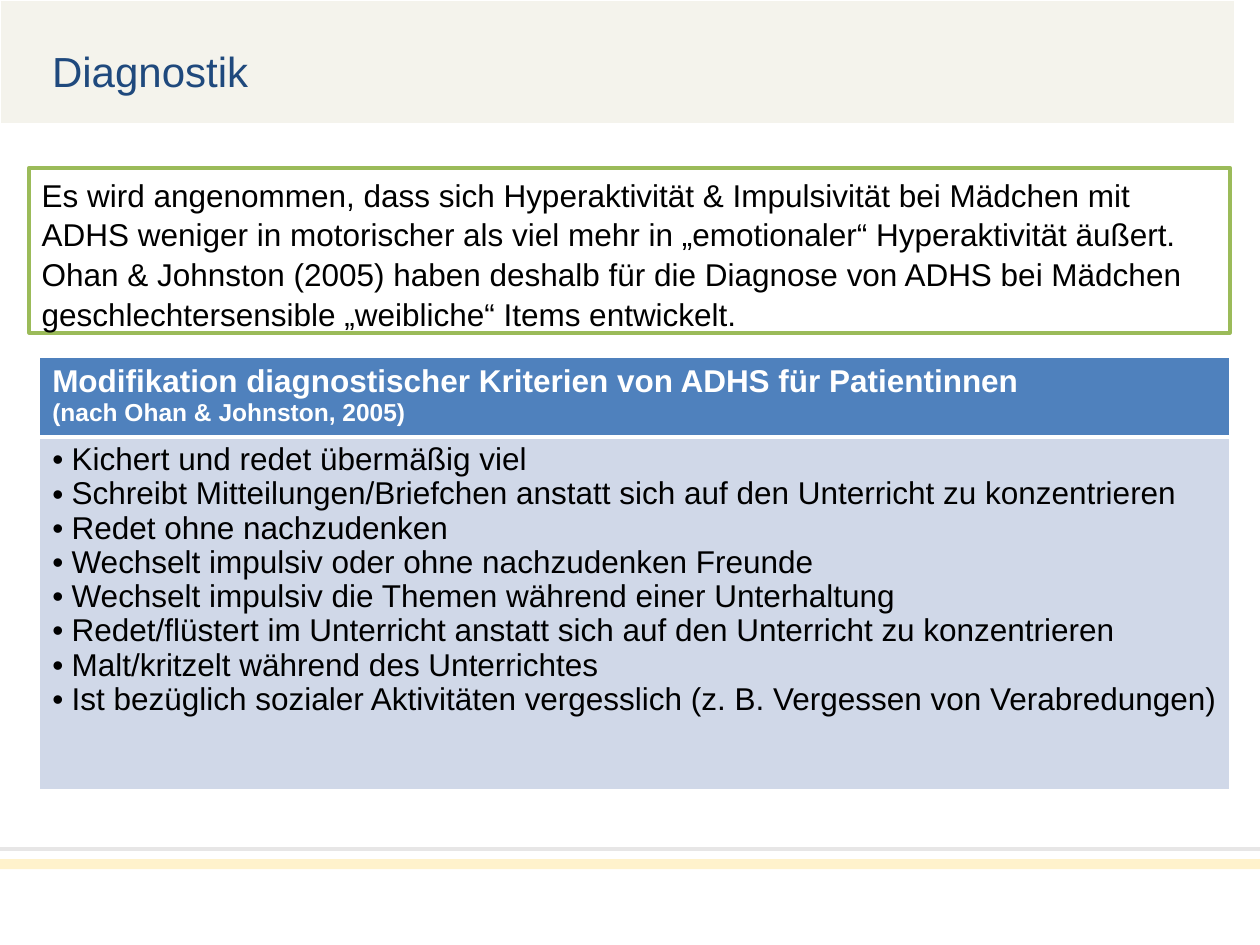
from lxml.etree import SubElement
from pptx import Presentation
from pptx.dml.color import RGBColor
from pptx.enum.shapes import MSO_CONNECTOR, MSO_SHAPE
from pptx.enum.text import MSO_ANCHOR, PP_ALIGN
from pptx.oxml.ns import qn
from pptx.util import Cm, Pt

WHITE = RGBColor(0xFF, 0xFF, 0xFF)
BLACK = RGBColor(0x00, 0x00, 0x00)
CREAM = RGBColor(0xF4, 0xF3, 0xEC)
NAVY = RGBColor(0x1F, 0x49, 0x7D)
BLUE = RGBColor(0x4F, 0x81, 0xBD)
PALE_BLUE = RGBColor(0xD0, 0xD8, 0xE8)
GREEN = RGBColor(0x9B, 0xBB, 0x59)
GREY = RGBColor(0xE7, 0xE6, 0xE6)
YELLOW = RGBColor(0xFF, 0xF2, 0xCC)

INTRO = (
    "Es wird angenommen, dass sich Hyperaktivität & Impulsivität bei Mädchen mit "
    "ADHS weniger in motorischer als viel mehr in „emotionaler“ Hyperaktivität äußert. "
    "Ohan & Johnston (2005) haben deshalb für die Diagnose von ADHS bei Mädchen "
    "geschlechtersensible „weibliche“ Items entwickelt."
)
HEADING = [
    "Modifikation diagnostischer Kriterien von ADHS für Patientinnen",
    "(nach Ohan & Johnston, 2005)",
]
CRITERIA = [
    "Kichert und redet übermäßig viel",
    "Schreibt Mitteilungen/Briefchen anstatt sich auf den Unterricht zu konzentrieren",
    "Redet ohne nachzudenken",
    "Wechselt impulsiv oder ohne nachzudenken Freunde",
    "Wechselt impulsiv die Themen während einer Unterhaltung",
    "Redet/flüstert im Unterricht anstatt sich auf den Unterricht zu konzentrieren",
    "Malt/kritzelt während des Unterrichtes",
    "Ist bezüglich sozialer Aktivitäten vergesslich (z. B. Vergessen von Verabredungen)",
]


class PageBuilder:
    font_name = "Arial"
    bullet_indent = Cm(0.39)

    def __init__(self, page):
        self.page = page

    def style(self, para, size, color, bold=False, spacing=1.0):
        para.alignment = PP_ALIGN.LEFT
        para.line_spacing = spacing
        for span in para.runs:
            span.font.name = self.font_name
            span.font.size = Pt(size)
            span.font.bold = bold
            span.font.color.rgb = color

    def bullet(self, para):
        properties = para._p.get_or_add_pPr()
        properties.set("marL", str(self.bullet_indent))
        properties.set("indent", str(-self.bullet_indent))
        SubElement(properties, qn("a:buFont"), typeface=self.font_name)
        SubElement(properties, qn("a:buChar"), char="•")

    def rectangle(self, left, top, width, height, fill=None, line=None, weight=0.75):
        box = self.page.shapes.add_shape(
            MSO_SHAPE.RECTANGLE, Cm(left), Cm(top), Cm(width), Cm(height))
        box.shadow.inherit = False
        if fill is None:
            box.fill.background()
        else:
            box.fill.solid()
            box.fill.fore_color.rgb = fill
        if line is None:
            box.line.fill.background()
        else:
            box.line.color.rgb = line
            box.line.width = Pt(weight)
        return box

    def text(self, box, content, size, color, spacing=1.0):
        frame = box.text_frame
        frame.word_wrap = True
        frame.vertical_anchor = MSO_ANCHOR.TOP
        frame.text = content
        self.style(frame.paragraphs[0], size, color, spacing=spacing)

    def title(self, left, top, width, height, content):
        box = self.page.shapes.add_textbox(Cm(left), Cm(top), Cm(width), Cm(height))
        self.text(box, content, 24, NAVY)

    def line(self, left, top, width, color, weight):
        rule = self.page.shapes.add_connector(
            MSO_CONNECTOR.STRAIGHT, Cm(left), Cm(top), Cm(left + width), Cm(top))
        rule.line.color.rgb = color
        rule.line.width = Pt(weight)
        SubElement(rule._element.spPr, qn("a:effectLst"))

    def borders(self, cell, bottom):
        properties = cell._tc.get_or_add_tcPr()
        weights = {"a:lnL": 1, "a:lnR": 1, "a:lnT": 1, "a:lnB": bottom}
        for position, (tag, weight) in enumerate(weights.items()):
            edge = properties.makeelement(qn(tag), {"w": str(Pt(weight))})
            fill = SubElement(edge, qn("a:solidFill"))
            SubElement(fill, qn("a:srgbClr"), val=str(WHITE))
            properties.insert(position, edge)

    def table(self, left, top, width, heights, heading, items):
        frame = self.page.shapes.add_table(
            len(heights), 1, Cm(left), Cm(top), Cm(width), Cm(sum(heights)))
        grid = frame.table
        for row, height in zip(grid.rows, heights):
            row.height = Cm(height)
        head, body = grid.cell(0, 0), grid.cell(1, 0)
        for cell, fill, content, bottom in (
                (head, BLUE, heading, 3), (body, PALE_BLUE, items, 1)):
            cell.fill.solid()
            cell.fill.fore_color.rgb = fill
            cell.text_frame.text = "\n".join(content)
            self.borders(cell, bottom)
        for para, size in zip(head.text_frame.paragraphs, (18, 14)):
            self.style(para, size, WHITE, bold=True)
        for para in body.text_frame.paragraphs:
            self.bullet(para)
            self.style(para, 18, BLACK, spacing=0.97)


def main():
    deck = Presentation()
    deck.slide_width, deck.slide_height = Cm(25.4), Cm(19.05)
    builder = PageBuilder(deck.slides.add_slide(deck.slide_layouts[6]))
    builder.rectangle(0, 0, 24.9, 2.5, CREAM, WHITE)
    builder.title(0.8, 0.8, 19.05, 1.28, "Diagnostik")
    builder.table(0.8, 7.2, 24, (1.58, 7.12), HEADING, CRITERIA)
    intro = builder.rectangle(0.59, 3.38, 24.2, 3.33, line=GREEN, weight=2.25)
    builder.text(intro, INTRO, 18, BLACK, spacing=1.05)
    builder.line(0, 17.12, 25.4, GREY, 2)
    builder.rectangle(0, 17.32, 25.4, 0.2, YELLOW)
    deck.save("out.pptx")


if __name__ == "__main__":
    main()
